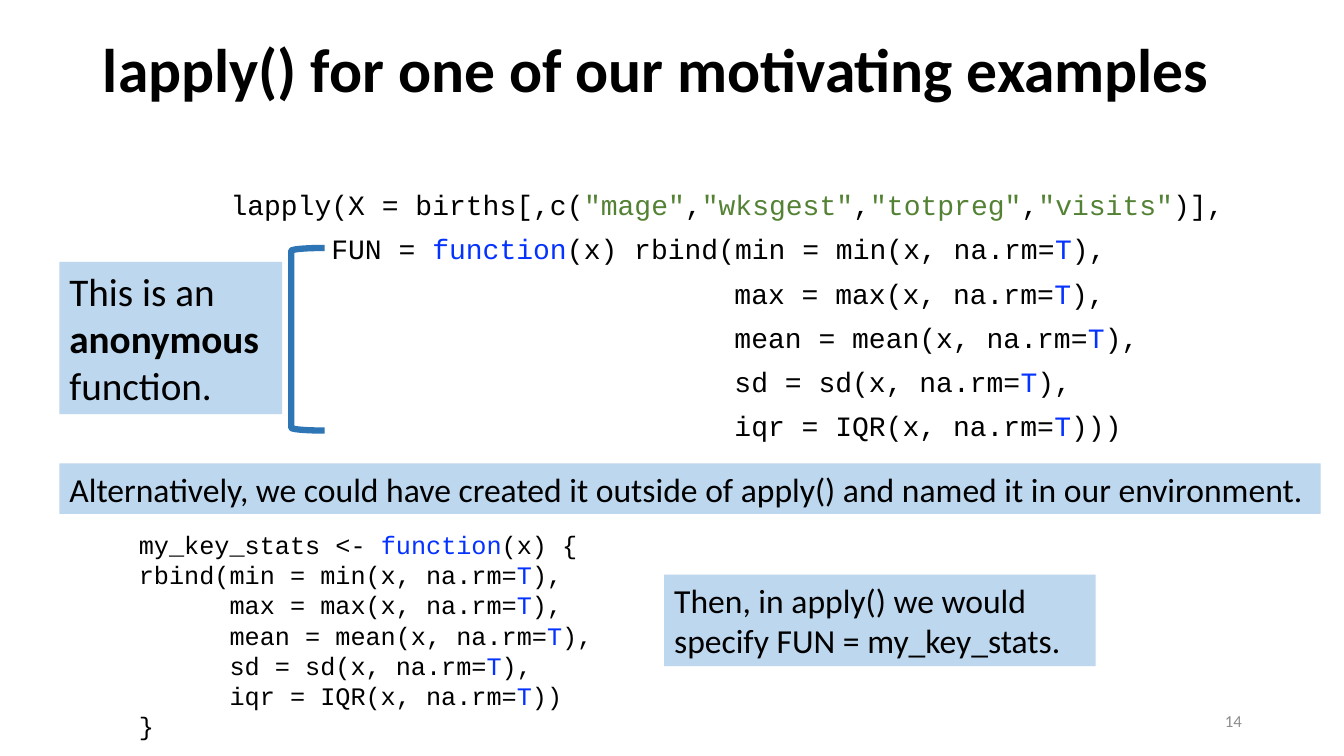
from pptx import Presentation
from pptx.dml.color import RGBColor
from pptx.enum.shapes import MSO_SHAPE as Shape
from pptx.enum.text import MSO_ANCHOR as Anchor, MSO_AUTO_SIZE as AutoSize, PP_ALIGN as Align
from pptx.util import Cm, Pt

BLACK, BLUE, GREEN, GREY = "000000", "0432FF", "548235", "8C8C8C"
NOTE_FILL, BRACKET_LINE = "BDD7EE", "2E75B6"

# Content: code lines are (indent in characters, text), "|" parts the coloured tokens
TITLE = "lapply() for one of our motivating examples"
PAGE_NUMBER = "14"
LAPPLY_CODE = [
    (0, 'lapply(X = births[,c(|"mage"|,|"wksgest"|,|"totpreg"|,|"visits"|)],'),
    (6, "FUN = |function|(x) rbind(min = min(x, na.rm=|T|),"),
    (30, "max = max(x, na.rm=|T|),"),
    (30, "mean = mean(x, na.rm=|T|),"),
    (30, "sd = sd(x, na.rm=|T|),"),
    (30, "iqr = IQR(x, na.rm=|T|)))"),
]
NAMED_CODE = [
    (0, "my_key_stats <- |function|(x) {"),
    (0, "rbind(min = min(x, na.rm=|T|),"),
    (6, "max = max(x, na.rm=|T|),"),
    (6, "mean = mean(x, na.rm=|T|),"),
    (6, "sd = sd(x, na.rm=|T|),"),
    (6, "iqr = IQR(x, na.rm=|T|))"),
    (0, "}"),
]
# Notes: spans (text, bold), size, place (left, top, width, height in cm)
NOTES = [
    ([("This is an ", False), ("anonymous", True), (" function.", False)],
     28, (1.5, 6.6, 5.61, 3.84)),
    ([("Alternatively, we could have created it outside of apply() "
       "and named it in our environment.", False)],
     24, (1.5, 11.68, 31.78, 1.27)),
    ([("Then, in apply() we would specify FUN = my_key_stats.", False)],
     24, (16.74, 14.48, 10.87, 2.31)),
]


def colour(value):
    return RGBColor.from_string(value)


def place(box):
    return [Cm(length) for length in box]


def style(span, size, font="Calibri", shade=BLACK, bold=False):
    span.font.size, span.font.name, span.font.bold = Pt(size), font, bold
    span.font.color.rgb = colour(shade)


def token_colour(token):
    if token in ("T", "function"):
        return BLUE
    return GREEN if token.startswith('"') else BLACK


def add_code(page, lines, size, box, spacing=1.0, before=0):
    frame = page.shapes.add_textbox(*place(box)).text_frame
    frame.word_wrap = True
    for number, (indent, line) in enumerate(lines):
        para = frame.add_paragraph() if number else frame.paragraphs[0]
        para.line_spacing, para.space_before = spacing, Pt(before)
        # A Courier New character is 0.6 of the type size wide
        margin = para._p.get_or_add_pPr()
        margin.set("marL", str(int(Pt(indent * size * 0.6))))
        margin.set("indent", "0")
        for token in line.split("|"):
            span = para.add_run()
            span.text = token
            style(span, size, "Courier New", token_colour(token))


def add_note(page, spans, size, box):
    note = page.shapes.add_shape(Shape.RECTANGLE, *place(box))
    note.shadow.inherit = False
    note.fill.solid()
    note.fill.fore_color.rgb = colour(NOTE_FILL)
    note.line.fill.background()
    frame = note.text_frame
    frame.word_wrap, frame.vertical_anchor = True, Anchor.TOP
    para = frame.paragraphs[0]
    para.alignment = Align.LEFT
    for text, bold in spans:
        span = para.add_run()
        span.text = text
        style(span, size, bold=bold)


def main():
    deck = Presentation()
    deck.slide_width, deck.slide_height = Cm(33.87), Cm(19.05)
    page = deck.slides.add_slide(deck.slide_layouts[5])

    # Title
    title = page.shapes.title
    title.left, title.top, title.width, title.height = place((2.34, 0, 29.21, 3.68))
    frame = title.text_frame
    frame.text = TITLE
    frame.word_wrap, frame.auto_size = True, AutoSize.NONE
    frame.vertical_anchor = Anchor.MIDDLE
    para = frame.paragraphs[0]
    para.alignment, para.line_spacing = Align.LEFT, 0.9
    style(para.runs[0], 44, bold=True)

    # Code with the anonymous function
    add_code(page, LAPPLY_CODE, 20, (5.56, 4.7, 25.96, 12.09), spacing=0.9, before=10)

    # Page number
    frame = page.shapes.add_textbox(*place((23.93, 17.65, 7.62, 1.02))).text_frame
    frame.text = PAGE_NUMBER
    frame.word_wrap, frame.vertical_anchor = True, Anchor.MIDDLE
    frame.paragraphs[0].alignment = Align.RIGHT
    style(frame.paragraphs[0].runs[0], 12, shade=GREY)

    # Bracket around the function
    bracket = page.shapes.add_shape(Shape.LEFT_BRACKET, *place((7.34, 6.25, 0.84, 4.6)))
    bracket.shadow.inherit = False
    bracket.fill.background()
    bracket.line.color.rgb = colour(BRACKET_LINE)
    bracket.line.width = Pt(4.5)

    # Notes, then the code with the named function
    for spans, size, box in NOTES:
        add_note(page, spans, size, box)
    add_code(page, NAMED_CODE, 18, (3.25, 13.21, 16.94, 5.64))

    deck.save("out.pptx")


if __name__ == "__main__":
    main()
